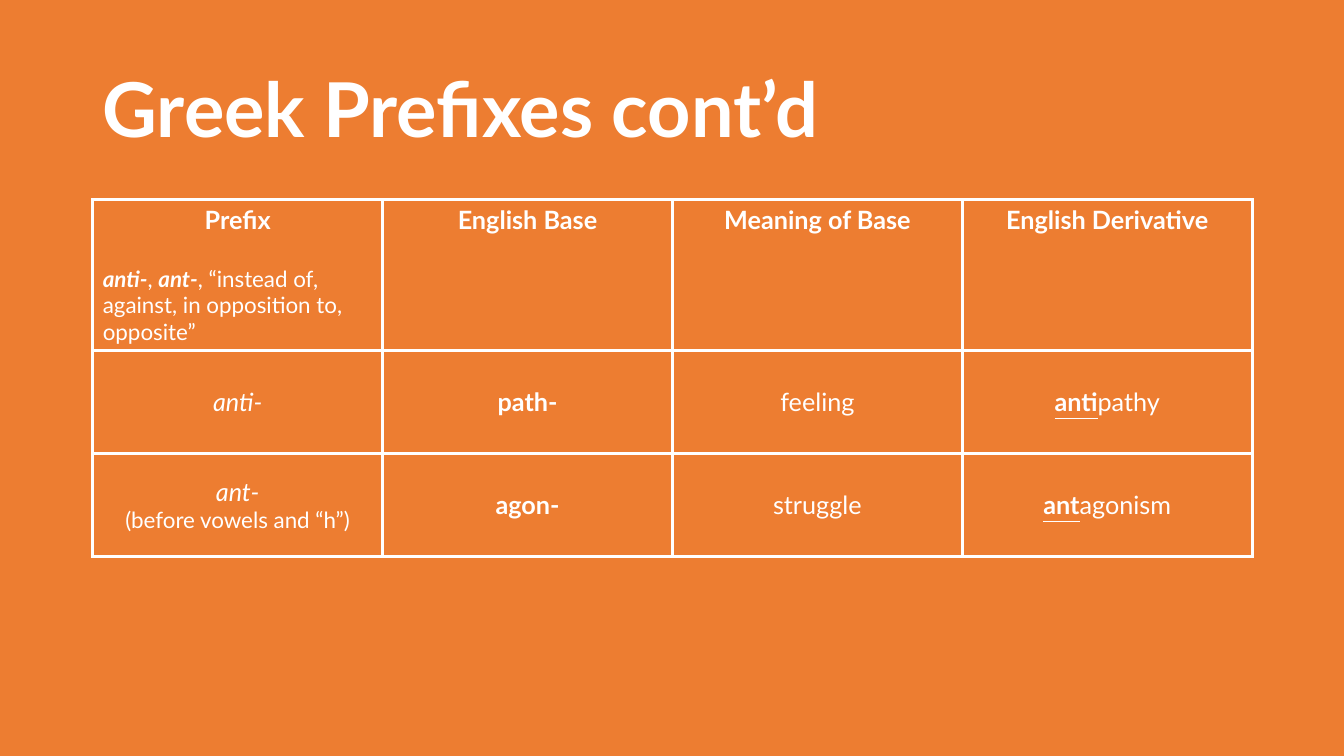
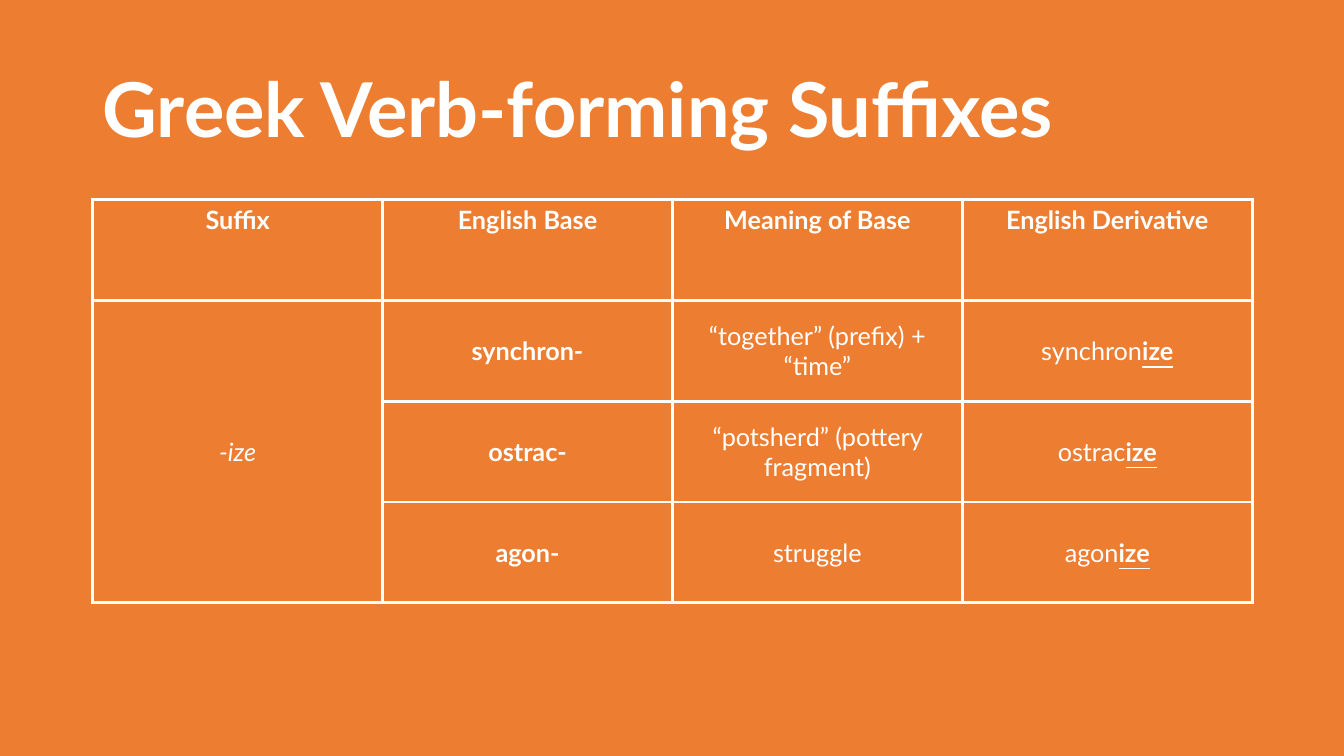
from lxml.etree import SubElement
from pptx import Presentation
from pptx.dml.color import RGBColor
from pptx.enum.text import MSO_ANCHOR, PP_ALIGN
from pptx.oxml.ns import qn
from pptx.util import Inches, Pt

ORANGE = RGBColor(0xED, 0x7D, 0x31)
WHITE = RGBColor(0xFF, 0xFF, 0xFF)
FONT = "Lato"
TITLE_SIZE, CELL_SIZE, NOTE_SIZE = 54, 18, 16
BORDER = 2.25
LEFT, WIDTH = 0.92, 11.5
TITLE_TOP, TITLE_HEIGHT, TABLE_TOP = 0.4, 1.45, 1.98

BASE_HEADINGS = ["English Base", "Meaning of Base", "English Derivative"]

# A cell is a list of paragraphs, a paragraph a list of (text, style) spans.
# Style letters: b bold, i italic, u underlined.
PREFIX_NOTE = [
    ("anti-", "bi"), (", ", ""), ("ant-", "bi"),
    (", “instead of, against, in opposition to, opposite”", ""),
]
SLIDES = [
    {
        "title": "Greek Prefixes cont’d",
        "heading": "Prefix",
        "note": PREFIX_NOTE,
        "heights": [1.5, 1.02, 1.02],
        "rows": [
            ([[("anti-", "i")]], "path-", "feeling",
             [("anti", "bu"), ("pathy", "")]),
            ([[("ant-", "i")], [("(before vowels and “h”)", "")]],
             "agon-", "struggle", [("ant", "bu"), ("agonism", "")]),
        ],
    },
    {
        "title": "Greek Verb-forming Suffixes",
        "heading": "Suffix",
        "heights": [1, 1, 1, 1],
        "merge_first_column": True,
        "rows": [
            ([[("-ize", "i")]], "synchron-", "“together” (prefix) + “time”",
             [("synchron", ""), ("ize", "bu")]),
            (None, "ostrac-", "“potsherd” (pottery fragment)",
             [("ostrac", ""), ("ize", "bu")]),
            (None, "agon-", "struggle", [("agon", ""), ("ize", "bu")]),
        ],
    },
]


def add_span(para, text, style, size):
    span = para.add_run()
    span.text = text
    formats = {
        "name": FONT, "size": Pt(size), "bold": "b" in style,
        "italic": "i" in style, "underline": "u" in style,
    }
    for name, value in formats.items():
        setattr(span.font, name, value)
    span.font.color.rgb = WHITE


def write_paragraph(frame, number, spans, size, align=PP_ALIGN.CENTER):
    para = frame.add_paragraph() if number else frame.paragraphs[0]
    para.alignment = align
    for text, style in spans:
        add_span(para, text, style, size)
    return para


def outline_cell(cell):
    properties = cell._tc.get_or_add_tcPr()
    for side in ("lnL", "lnR", "lnT", "lnB"):
        line = SubElement(properties, qn(f"a:{side}"), w=str(Pt(BORDER)))
        fill = SubElement(line, qn("a:solidFill"))
        SubElement(fill, qn("a:srgbClr"), val=str(WHITE))
    cell.fill.background()


def add_title(page, text):
    box = page.shapes.add_textbox(
        Inches(LEFT), Inches(TITLE_TOP), Inches(WIDTH), Inches(TITLE_HEIGHT))
    frame = box.text_frame
    frame.word_wrap = True
    frame.vertical_anchor = MSO_ANCHOR.MIDDLE
    para = write_paragraph(frame, 0, [(text, "b")], TITLE_SIZE, PP_ALIGN.LEFT)
    para.line_spacing = 0.9


def add_word_table(page, content):
    headings = [content["heading"], *BASE_HEADINGS]
    heights = content["heights"]
    table = page.shapes.add_table(
        len(heights), len(headings), Inches(LEFT), Inches(TABLE_TOP),
        Inches(WIDTH), Inches(sum(heights))).table
    table.first_row = table.horz_banding = False
    for row, height in zip(table.rows, heights):
        row.height = Inches(height)
    for column in table.columns:
        column.width = Inches(WIDTH / len(headings))
    for cell in table.iter_cells():
        outline_cell(cell)

    for column, heading in enumerate(headings):
        write_paragraph(table.cell(0, column).text_frame, 0,
                        [(heading, "b")], CELL_SIZE)
    if "note" in content:
        note = write_paragraph(table.cell(0, 0).text_frame, 1,
                               content["note"], NOTE_SIZE, PP_ALIGN.LEFT)
        note.space_before = Pt(CELL_SIZE * 1.2)

    if content.get("merge_first_column"):
        table.cell(1, 0).merge(table.cell(len(heights) - 1, 0))
    for row, (affix, base, meaning, derivative) in enumerate(content["rows"], 1):
        cells = [affix, [[(base, "b")]], [[(meaning, "")]], [derivative]]
        for column, paragraphs in enumerate(cells):
            if paragraphs is None:
                continue
            cell = table.cell(row, column)
            cell.vertical_anchor = MSO_ANCHOR.MIDDLE
            for number, spans in enumerate(paragraphs):
                size = NOTE_SIZE if number else CELL_SIZE
                write_paragraph(cell.text_frame, number, spans, size)


def main():
    deck = Presentation()
    deck.slide_width, deck.slide_height = Inches(13.33), Inches(7.5)
    blank = deck.slide_layouts[6]
    for content in SLIDES:
        page = deck.slides.add_slide(blank)
        background = page.background.fill
        background.solid()
        background.fore_color.rgb = ORANGE
        add_title(page, content["title"])
        add_word_table(page, content)
    deck.save("out.pptx")


if __name__ == "__main__":
    main()
